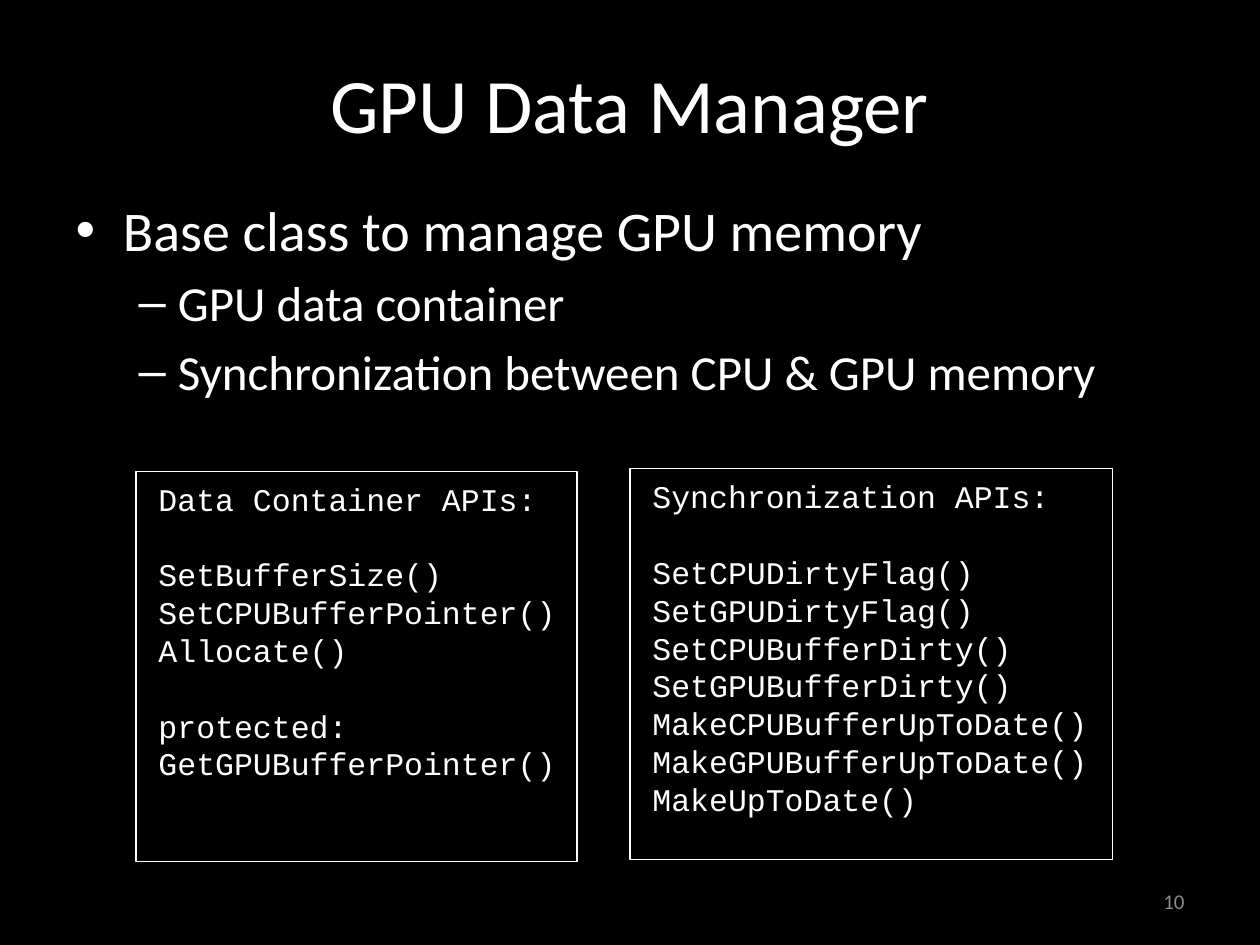
from dataclasses import dataclass

from pptx import Presentation
from pptx.dml.color import RGBColor
from pptx.enum import shapes, text
from pptx.util import Inches, Pt


@dataclass(frozen=True)
class Theme:
    """Colours, fonts and type sizes of the slide."""
    background: RGBColor = RGBColor(0, 0, 0)
    foreground: RGBColor = RGBColor(255, 255, 255)
    muted: RGBColor = RGBColor(0x8C, 0x8C, 0x8C)
    body_font: str = "Calibri"
    code_font: str = "Courier New"
    title_size: Pt = Pt(44)
    bullet_sizes: tuple = (Pt(32), Pt(28))
    code_size: Pt = Pt(18)
    section_gap: Pt = Pt(21.6)
    number_size: Pt = Pt(12)
    line_width: Pt = Pt(0.75)


THEME = Theme()


def style(paragraph, name, size, color=THEME.foreground):
    """Set the font of a whole paragraph."""
    paragraph.font.name = name
    paragraph.font.size = size
    paragraph.font.color.rgb = color


def place(shape, box):
    """Move a shape to a box of left, top, width and height in inches."""
    shape.left, shape.top, shape.width, shape.height = map(Inches, box)


def fill_title(shape, box, wording):
    """Write the slide title."""
    place(shape, box)
    shape.text_frame.text = wording
    shape.text_frame.vertical_anchor = text.MSO_ANCHOR.MIDDLE
    paragraph = shape.text_frame.paragraphs[0]
    paragraph.alignment = text.PP_ALIGN.CENTER
    style(paragraph, THEME.body_font, THEME.title_size)


def fill_bullets(shape, box, bullets):
    """Write the bullet list from pairs of level and wording."""
    place(shape, box)
    frame = shape.text_frame
    frame.text = "\n".join(wording for _, wording in bullets)
    for paragraph, (level, _) in zip(frame.paragraphs, bullets):
        paragraph.level = level
        style(paragraph, THEME.body_font, THEME.bullet_sizes[level])


def add_api_panel(slide, box, sections):
    """Group a framed rectangle with its sections of code lines."""
    left, top, width, height = box
    group = slide.shapes.add_group_shape()
    label = group.shapes.add_textbox(
        *map(Inches, (left + 0.08, top + 0.02, width, height)))
    frame = label.text_frame
    frame.word_wrap = True
    frame.text = "\n".join(line for section in sections for line in section)
    paragraphs = iter(frame.paragraphs)
    for number, section in enumerate(sections):
        for position, _ in enumerate(section):
            paragraph = next(paragraphs)
            style(paragraph, THEME.code_font, THEME.code_size)
            if number and position == 0:
                paragraph.space_before = THEME.section_gap
    outline = group.shapes.add_shape(
        shapes.MSO_SHAPE.RECTANGLE, *map(Inches, box))
    outline.shadow.inherit = False
    outline.fill.background()
    outline.line.color.rgb = THEME.foreground
    outline.line.width = THEME.line_width


def add_slide_number(slide, box, number):
    """Write the slide number at the right of its box."""
    frame = slide.shapes.add_textbox(*map(Inches, box)).text_frame
    frame.word_wrap = True
    frame.vertical_anchor = text.MSO_ANCHOR.MIDDLE
    frame.text = str(number)
    paragraph = frame.paragraphs[0]
    paragraph.alignment = text.PP_ALIGN.RIGHT
    style(paragraph, THEME.body_font, THEME.number_size, THEME.muted)


def main():
    """Build and save the slide."""
    presentation = Presentation()
    presentation.slide_width = Inches(10)
    presentation.slide_height = Inches(7.5)
    slide = presentation.slides.add_slide(presentation.slide_layouts[1])
    slide.background.fill.solid()
    slide.background.fill.fore_color.rgb = THEME.background

    fill_title(slide.shapes.title, (0.5, 0.3, 9, 1.03), "GPU Data Manager")
    fill_bullets(slide.placeholders[1], (0.5, 1.5, 9, 5.2), [
        (0, "Base class to manage GPU memory"),
        (1, "GPU data container"),
        (1, "Synchronization between CPU & GPU memory"),
    ])
    add_slide_number(slide, (7.17, 6.95, 2.33, 0.4), 10)
    add_api_panel(slide, (1.08, 3.74, 3.5, 3.1), [
        ["Data Container APIs:"],
        ["SetBufferSize()", "SetCPUBufferPointer()", "Allocate()"],
        ["protected:", "GetGPUBufferPointer()"],
    ])
    add_api_panel(slide, (5, 3.72, 3.83, 3.1), [
        ["Synchronization APIs:"],
        ["SetCPUDirtyFlag()", "SetGPUDirtyFlag()",
         "SetCPUBufferDirty()", "SetGPUBufferDirty()",
         "MakeCPUBufferUpToDate()", "MakeGPUBufferUpToDate()",
         "MakeUpToDate()"],
    ])
    presentation.save("out.pptx")


if __name__ == "__main__":
    main()
